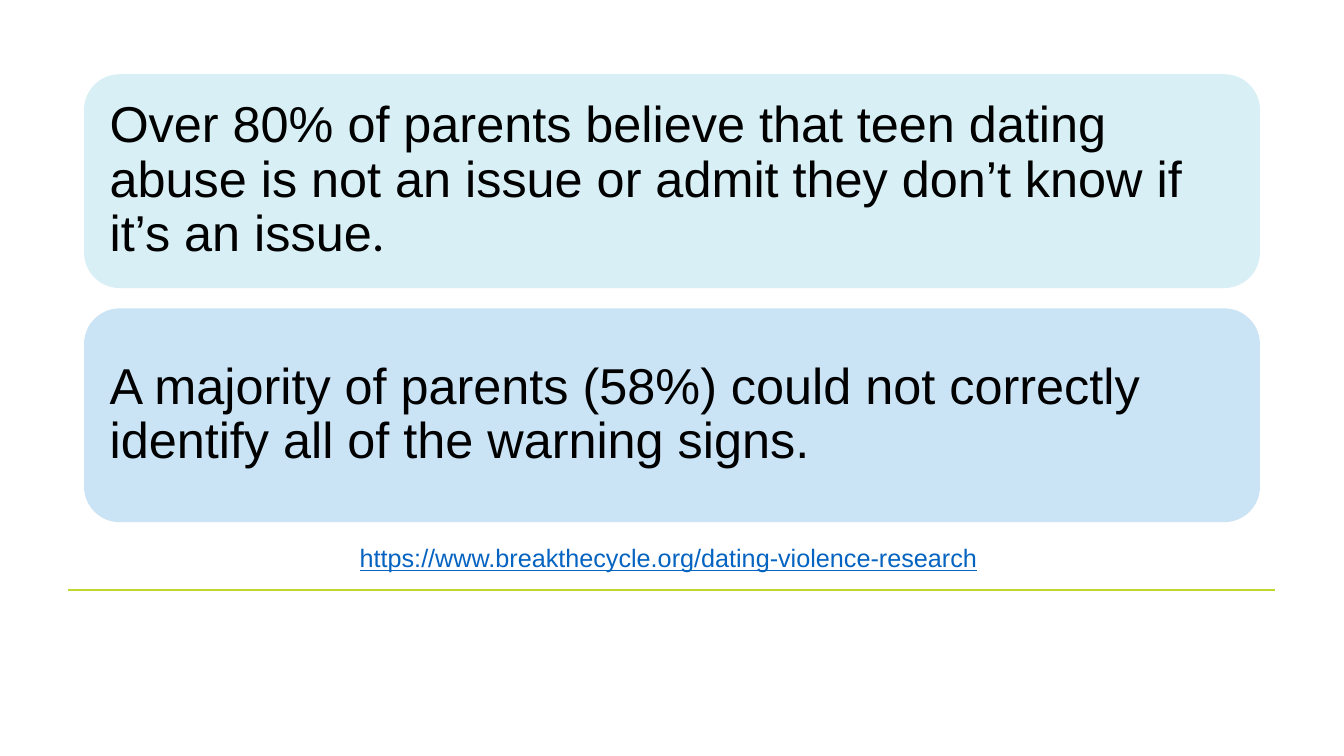
from pptx import Presentation
from pptx.dml.color import RGBColor
from pptx.enum.shapes import MSO_CONNECTOR, MSO_SHAPE
from pptx.enum.text import MSO_ANCHOR, PP_ALIGN
from pptx.oxml.ns import qn
from pptx.util import Pt
from lxml import etree

ROUNDED = MSO_SHAPE.ROUNDED_RECTANGLE
STRAIGHT = MSO_CONNECTOR.STRAIGHT
MIDDLE = MSO_ANCHOR.MIDDLE
LEFT, CENTER = PP_ALIGN.LEFT, PP_ALIGN.CENTER

BLACK = RGBColor(0x00, 0x00, 0x00)
PALE_TEAL = RGBColor(0xD7, 0xEF, 0xF5)
PALE_BLUE = RGBColor(0xCA, 0xE4, 0xF6)
LINK_BLUE = RGBColor(0x05, 0x63, 0xC1)
LIME = RGBColor(0xC1, 0xD8, 0x2E)


def apply(target, values):
    for name, value in values.items():
        setattr(target, name, value)


class Page:
    """Holds the text style and the current slide."""

    font = "Arial"
    card_size, source_size = Pt(36), Pt(18)

    def __init__(self, deck):
        self.shapes = deck.slides.add_slide(deck.slide_layouts[6]).shapes

    def add_span(self, para, text, size, color, font=font, underline=False):
        span = para.add_run()
        span.text = text
        apply(span.font, {"name": font, "size": size, "underline": underline})
        span.font.color.rgb = color

    def rule(self, left, right, top, color):
        line = self.shapes.add_connector(
            STRAIGHT, Pt(left), Pt(top), Pt(right), Pt(top))
        line.line.color.rgb = color
        line.line.width = Pt(1.5)
        etree.SubElement(line._element.spPr, qn("a:effectLst"))

    def card(self, left, top, width, height, fill, spans):
        box = self.shapes.add_shape(
            ROUNDED, Pt(left), Pt(top), Pt(width), Pt(height))
        box.shadow.inherit = False
        box.fill.solid()
        box.fill.fore_color.rgb = fill
        box.line.fill.background()
        inset = Pt(10.8)
        apply(box.text_frame, {
            "word_wrap": True, "vertical_anchor": MIDDLE,
            "margin_left": inset, "margin_right": inset,
            "margin_top": inset, "margin_bottom": inset})
        para = box.text_frame.paragraphs[0]
        apply(para, {"alignment": LEFT, "line_spacing": 0.9,
                     "space_after": Pt(12.6)})
        for text, font in spans:
            self.add_span(para, text, self.card_size, BLACK, font)

    def source(self, left, top, width, height, address):
        box = self.shapes.add_textbox(
            Pt(left), Pt(top), Pt(width), Pt(height))
        box.text_frame.word_wrap = True
        para = box.text_frame.paragraphs[0]
        para.alignment = CENTER
        self.add_span(para, address, self.source_size, LINK_BLUE,
                      underline=True)
        self.add_span(para, " ", self.source_size, BLACK)


def main():
    deck = Presentation()
    deck.slide_width, deck.slide_height = Pt(960), Pt(540)
    page = Page(deck)

    # Rule above the footer
    page.rule(48.75, 910.75, 421.25, LIME)

    # Two stacked findings
    findings = [
        (PALE_TEAL, [("Over 80% of parents believe that teen dating abuse is "
                      "not an issue or admit they don’t know if it’s an issue",
                      "Arial"), (".", "Calibri")]),
        (PALE_BLUE, [("A majority of parents (58%) could not correctly "
                      "identify all of the warning signs.", "Arial")]),
    ]
    card_height, gap = 152.75, 14.5
    for index, (fill, spans) in enumerate(findings):
        top = 53 + index * (card_height + gap)
        page.card(60, top, 840, card_height, fill, spans)

    # Source of the findings
    page.source(240, 383.75, 480, 29,
                "https://www.breakthecycle.org/dating-violence-research")

    deck.save("out.pptx")


if __name__ == "__main__":
    main()
